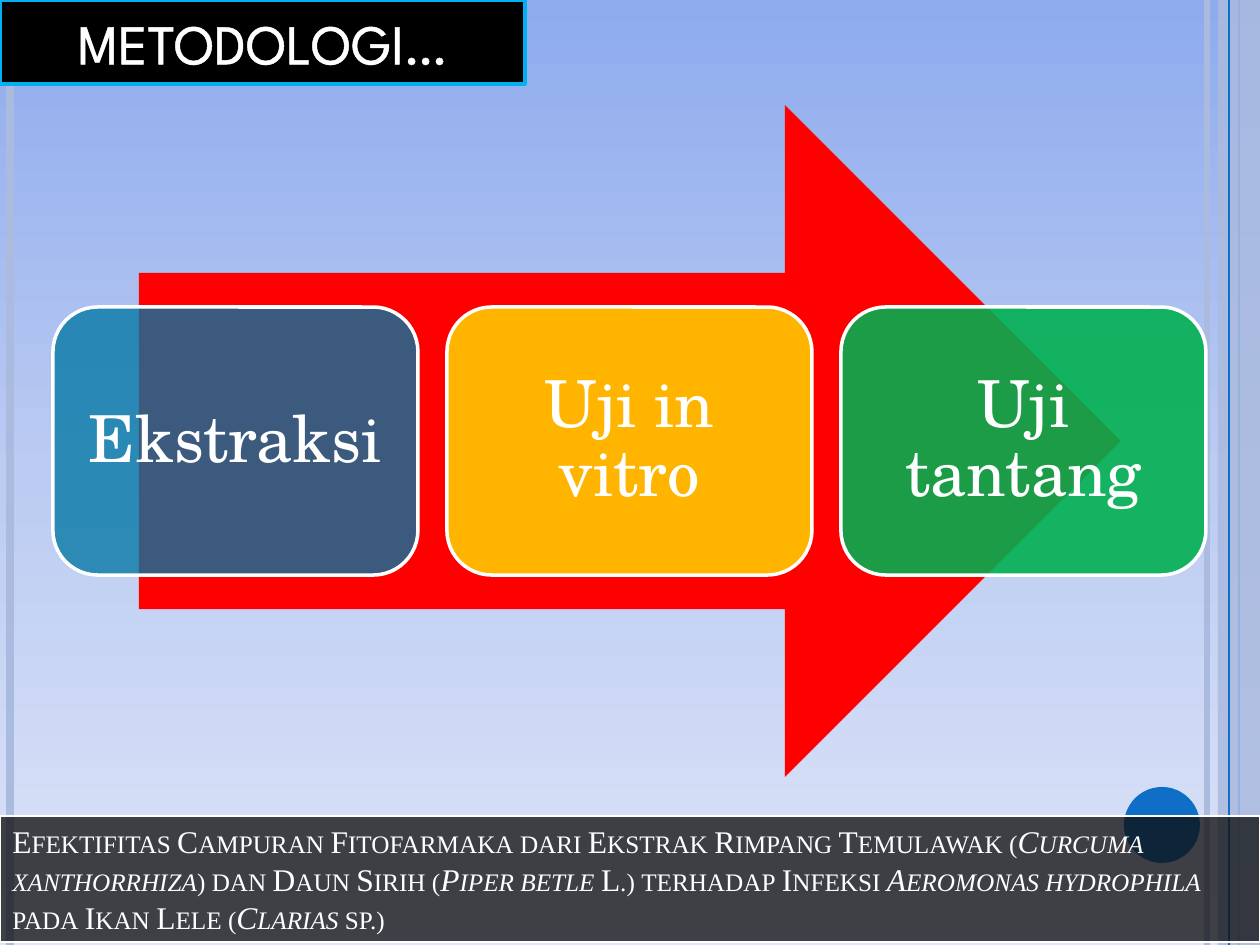
from copy import deepcopy
from dataclasses import dataclass
from lxml import etree
from pptx import Presentation
from pptx import util as u
from pptx.dml.color import RGBColor
from pptx.enum import shapes, text
from pptx.oxml.ns import qn


@dataclass(frozen=True)
class Theme:
    sky: tuple = ((0, "8EABEE"), (0.5, "BBCBF2"), (1, "DEE5F8"))
    stripe: str = "ABBBDF"
    accent: str = "0F6FC6"
    arrow: str = "FF0000"
    white: str = "FFFFFF"
    title_fill: str = "000000"
    title_line: str = "00B0F0"
    footer_fill: str = "0D0D0D"
    title_size: int = 32
    card_size: int = 37
    footer_size: int = 18
    title_font: str = "League Spartan"
    card_font: str = "TeX Gyre Schola"
    footer_font: str = "Times New Roman"


THEME = Theme()
SCALE = 914400 / 126
WIDTH, HEIGHT = 1260, 945


def emu(*lengths):
    return [u.Emu(round(length * SCALE)) for length in lengths]


def paint(shape, fill, opacity=100, line=None, weight=1):
    shape.shadow.inherit = False
    shape.fill.solid()
    shape.fill.fore_color.rgb = RGBColor.from_string(fill)
    if opacity < 100:
        color = shape.fill._xPr.find(qn("a:solidFill"))[0]
        etree.SubElement(color, qn("a:alpha"), val=str(opacity * 1000))
    if line:
        shape.line.color.rgb = RGBColor.from_string(line)
        shape.line.width = u.Pt(weight)
    else:
        shape.line.fill.background()


deck = Presentation()
deck.slide_width, deck.slide_height = emu(WIDTH, HEIGHT)
page = deck.slides.add_slide(deck.slide_layouts[5])

sky = page.background.fill
sky.gradient()
sky.gradient_angle = 270
first_stop = next(page._element.iter(qn("a:gs")))
first_stop.addnext(deepcopy(first_stop))
for stop, (position, color) in zip(sky.gradient_stops, THEME.sky):
    stop.position = position
    stop.color.rgb = RGBColor.from_string(color)

stripes = [
    (1207, THEME.stripe, 3),
    (10, THEME.stripe, 4.5),
    (1239, THEME.accent, 1.5),
    (1229, THEME.accent, 0.75),
]
for index, (x, color, weight) in enumerate(stripes):
    if index == 3:
        band = page.shapes.add_shape(shapes.MSO_SHAPE.RECTANGLE, *emu(1218, 0, 42, HEIGHT))
        paint(band, THEME.stripe, 87)
    stripe = page.shapes.add_connector(shapes.MSO_CONNECTOR.STRAIGHT, *emu(x, 0, x, HEIGHT))
    stripe.line.color.rgb = RGBColor.from_string(color)
    stripe.line.width = u.Pt(weight)
    etree.SubElement(stripe._element.spPr, qn("a:effectLst"))

dot = page.shapes.add_shape(shapes.MSO_SHAPE.OVAL, *emu(1124, 787, 76, 76))
paint(dot, THEME.accent)
arrow = page.shapes.add_shape(shapes.MSO_SHAPE.RIGHT_ARROW, *emu(139, 105, 982, 672))
paint(arrow, THEME.arrow)

panels = []
card_format = {"size": u.Pt(THEME.card_size), "name": THEME.card_font}
cards = [("Ekstraksi", "0076A3", 77), ("Uji in vitro", "FFFF00", 71), ("Uji tantang", "00B050", 89)]
for column, (label, color, opacity) in enumerate(cards):
    card = page.shapes.add_shape(
        shapes.MSO_SHAPE.ROUNDED_RECTANGLE, *emu(53 + 394 * column, 307, 365, 268))
    paint(card, color, opacity, THEME.white, 2)
    frame_format = dict.fromkeys(
        ("margin_left", "margin_right", "margin_top", "margin_bottom"), emu(18)[0])
    frame_format["vertical_anchor"] = text.MSO_ANCHOR.MIDDLE
    para_format = {"alignment": text.PP_ALIGN.CENTER, "line_spacing": 0.9}
    panels.append((card, frame_format, para_format, card_format, [label]))

title = page.shapes.title
title.left, title.top, title.width, title.height = emu(0, 0, 525, 84)
geometry = etree.SubElement(title._element.spPr, qn("a:prstGeom"), prst="round2DiagRect")
etree.SubElement(geometry, qn("a:avLst"))
page.shapes._spTree.append(title._element)
paint(title, THEME.title_fill, line=THEME.title_line, weight=2)
panels.append((
    title,
    {"vertical_anchor": text.MSO_ANCHOR.MIDDLE, "auto_size": text.MSO_AUTO_SIZE.NONE},
    {"alignment": text.PP_ALIGN.CENTER},
    {"size": u.Pt(THEME.title_size), "name": THEME.title_font},
    ["METODOLOGI…"],
))

footer = page.shapes.add_shape(shapes.MSO_SHAPE.RECTANGLE, *emu(0, 816, WIDTH, 126))
paint(footer, THEME.footer_fill, 76, THEME.white, 0.75)
panels.append((
    footer,
    {"vertical_anchor": text.MSO_ANCHOR.TOP},
    {"alignment": text.PP_ALIGN.LEFT},
    {"size": u.Pt(THEME.footer_size), "name": THEME.footer_font},
    [
        "Efektifitas Campuran Fitofarmaka dari Ekstrak Rimpang Temulawak (",
        "Curcuma xanthorrhiza",
        ") dan Daun Sirih (",
        "Piper betle",
        " L.) terhadap Infeksi ",
        "Aeromonas hydrophila ",
        "pada Ikan Lele (",
        "Clarias",
        " sp.)",
    ],
))

for box, frame_format, para_format, font_format, words in panels:
    frame = box.text_frame
    frame.word_wrap = True
    para = frame.paragraphs[0]
    for target, formats in ((frame, frame_format), (para, para_format)):
        for name, value in formats.items():
            setattr(target, name, value)
    for index, word in enumerate(words):
        span = para.add_run()
        span.text = word
        for name, value in font_format.items():
            setattr(span.font, name, value)
        span.font.italic = index % 2 == 1
        span.font.color.rgb = RGBColor.from_string(THEME.white)

for span in footer.text_frame.paragraphs[0].runs:
    span.font._element.set("cap", "small")

outline = etree.Element(qn("a:ln"), w=str(u.Pt(1.45)))
outline_fill = etree.SubElement(outline, qn("a:solidFill"))
etree.SubElement(outline_fill, qn("a:srgbClr"), val=THEME.white)
title.text_frame.paragraphs[0].runs[0].font._element.insert(0, outline)

deck.save("out.pptx")
